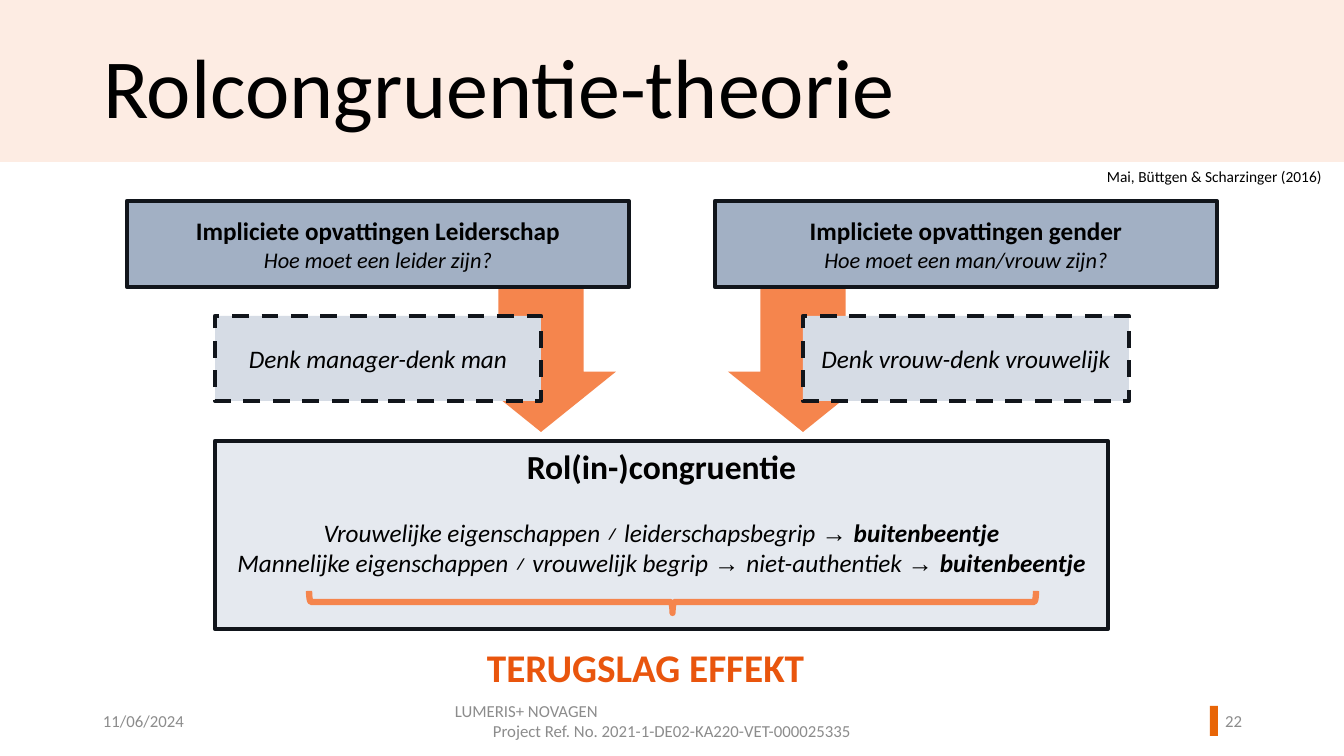
from pptx import Presentation, util as u
from pptx.dml.color import RGBColor
from pptx.enum import dml, shapes, text

PX = 914400 / 100.8
PAGE_W, PAGE_H = 1344, 756

BLACK = RGBColor(0x00, 0x00, 0x00)
GREY = RGBColor(0x8C, 0x8C, 0x8C)
INK = RGBColor(0x11, 0x15, 0x1B)
PEACH = RGBColor(0xFD, 0xEC, 0xE3)
ORANGE = RGBColor(0xF5, 0x85, 0x4D)
MARKER_ORANGE = RGBColor(0xE8, 0x65, 0x07)
EFFECT_ORANGE = RGBColor(0xE9, 0x55, 0x0D)
STEEL = RGBColor(0xA2, 0xB0, 0xC4)
PALE_STEEL = RGBColor(0xD6, 0xDC, 0xE5)
MIST = RGBColor(0xE5, 0xE9, 0xEF)

SHAPE = shapes.MSO_SHAPE
LEFT, CENTER, RIGHT = text.PP_ALIGN.LEFT, text.PP_ALIGN.CENTER, text.PP_ALIGN.RIGHT
TOP, MIDDLE = text.MSO_ANCHOR.TOP, text.MSO_ANCHOR.MIDDLE


def emu(box):
    return [round(length * PX) for length in box]


def style(font, size, color=BLACK, bold=False, italic=False):
    font.name, font.size = "Calibri", u.Pt(size)
    font.color.rgb, font.bold, font.italic = color, bold, italic


def add_para(frame, words, size, align=CENTER, **looks):
    """Write into the empty first paragraph, or else into a new one."""
    para = frame.paragraphs[0]
    if para.runs:
        para = frame.add_paragraph()
    para.alignment = align
    style(para.font, size, **looks)
    para.add_run().text = words
    return para


def add_shape(page, kind, box, fill=None, line=None, weight=3, dashed=False):
    shape = page.shapes.add_shape(kind, *emu(box))
    shape.shadow.inherit = False
    if fill is None:
        shape.fill.background()
    else:
        shape.fill.solid()
        shape.fill.fore_color.rgb = fill
    if line is None:
        shape.line.fill.background()
    else:
        shape.line.color.rgb = line
        shape.line.width = u.Pt(weight)
        if dashed:
            shape.line.dash_style = dml.MSO_LINE.DASH
    return shape


def add_turned(page, kind, box, **looks):
    """Place a shape so that it fills the box after a quarter turn."""
    x, y, w, h = box
    shape = add_shape(page, kind, (x + (w - h) / 2, y + (h - w) / 2, h, w), **looks)
    shape.rotation = 90
    return shape


def add_frame(page, box, anchor=TOP):
    frame = page.shapes.add_textbox(*emu(box)).text_frame
    frame.word_wrap = True
    frame.vertical_anchor = anchor
    return frame


def build_header(page, box):
    x, y, w, h = box
    add_shape(page, SHAPE.RECTANGLE, box, PEACH)
    title = page.shapes.title
    tree = title.element.getparent()
    tree.append(title.element)  # in front of the band
    title.left, title.top, title.width, title.height = emu((x + 93, y + 41, 1001, 86))
    frame = title.text_frame
    frame.auto_size = text.MSO_AUTO_SIZE.NONE
    frame.vertical_anchor = TOP
    para = add_para(frame, "Rolcongruentie-theorie", 60, LEFT)
    para.line_spacing = 0.9
    citation = add_frame(page, (x + w - 247, y + h, 247, 29))
    add_para(citation, "Mai, Büttgen & Scharzinger (2016)", 11, LEFT)


def build_belief(page, box, heading, question):
    frame = add_shape(page, SHAPE.RECTANGLE, box, STEEL, INK).text_frame
    frame.vertical_anchor = MIDDLE
    add_para(frame, heading, 18, bold=True)
    add_para(frame, question, 16, italic=True)


def build_stereotype(page, box, words, arrow_x):
    """Dashed box in front of a down arrow centred on arrow_x."""
    x, y, w, h = box
    arrow = add_turned(page, SHAPE.RIGHT_ARROW, (arrow_x - 75, y - 27, 150, 143), fill=ORANGE)
    arrow.adjustments[0], arrow.adjustments[1] = 0.567, 0.422
    frame = add_shape(page, SHAPE.RECTANGLE, box, PALE_STEEL, INK, dashed=True).text_frame
    frame.vertical_anchor = MIDDLE
    add_para(frame, words, 18, italic=True)


def build_result(page, box):
    x, y, w, h = box
    frame = add_shape(page, SHAPE.RECTANGLE, box, MIST, INK).text_frame
    frame.vertical_anchor = TOP
    heading = add_para(frame, "Rol(in-)congruentie", 24, bold=True)
    heading.space_after = u.Pt(22)
    chains = [
        ["Vrouwelijke eigenschappen ≠ leiderschapsbegrip "],
        ["Mannelijke eigenschappen ≠ vrouwelijk begrip ", "niet-authentiek "],
    ]
    for first, *others in chains:
        para = add_para(frame, first, 18, italic=True)
        for step in [*others, "buitenbeentje"]:
            arrow = para.add_run()
            arrow.text, arrow.font.name = "→ ", "Arial"
            span = para.add_run()
            span.text = step
        span.font.bold = True
    add_turned(page, SHAPE.RIGHT_BRACE, (x + 94, y + h - 38, 727, 22), line=ORANGE, weight=4.5)
    effect = add_frame(page, (x + 262, y + h + 9, 390, 57))
    add_para(effect, "TERUGSLAG EFFEKT", 28, LEFT, color=EFFECT_ORANGE, bold=True)


def build_footer(page, box):
    x, y, w, h = box
    add_shape(page, SHAPE.RECTANGLE, (x + 1210, y + 5, 8, 30), MARKER_ORANGE)
    date = add_frame(page, (x + 93, y, 302, h), MIDDLE)
    add_para(date, "11/06/2024", 12, LEFT, color=GREY)
    project = add_frame(page, (x + 445, y, 454, h), MIDDLE)
    add_para(project, "LUMERIS+ NOVAGEN", 12, LEFT, color=GREY)
    add_para(project, "Project Ref. No. 2021-1-DE02-KA220-VET-000025335", 12, color=GREY)
    number = add_frame(page, (x + 1186, y, 66, h), MIDDLE)
    add_para(number, "22", 12, RIGHT, color=GREY)


def main():
    deck = Presentation()
    deck.slide_width, deck.slide_height = emu((PAGE_W, PAGE_H))
    page = deck.slides.add_slide(deck.slide_layouts.get_by_name("Title Only"))
    build_header(page, (0, 0, PAGE_W, 162))
    build_stereotype(page, (215, 316, 326, 85), "Denk manager-denk man", 541)
    build_stereotype(page, (803, 316, 326, 85), "Denk vrouw-denk vrouwelijk", 803)
    build_belief(page, (127, 201, 502, 86),
                 "Impliciete opvattingen Leiderschap", "Hoe moet een leider zijn?")
    build_belief(page, (715, 201, 502, 86),
                 "Impliciete opvattingen gender", "Hoe moet een man/vrouw zijn?")
    build_result(page, (215, 441, 893, 188))
    build_footer(page, (0, 701, PAGE_W, 40))
    deck.save("out.pptx")


if __name__ == "__main__":
    main()
